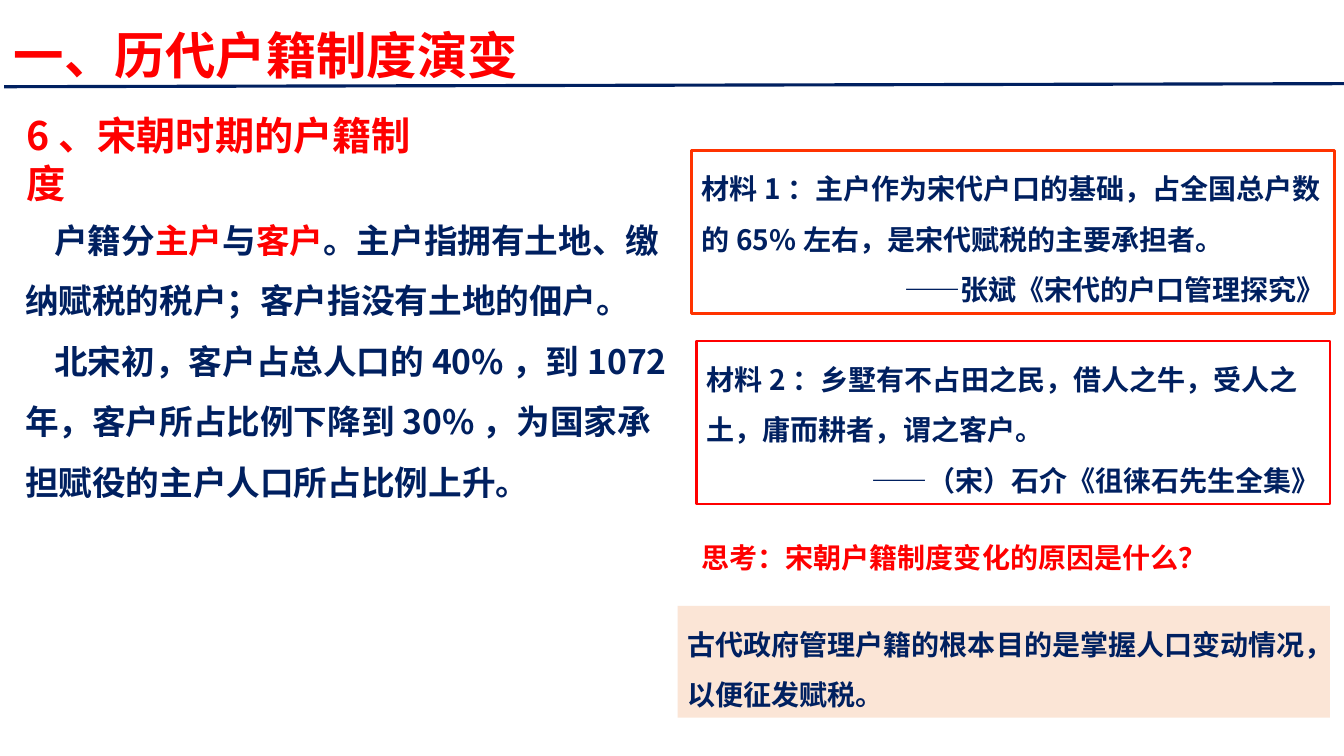
"""Build a slide on the household registration system of the Song dynasty."""
from lxml.etree import SubElement
from pptx import Presentation
from pptx.dml.color import RGBColor
from pptx.enum.shapes import MSO_CONNECTOR, MSO_SHAPE
from pptx.enum.text import MSO_ANCHOR, MSO_AUTO_SIZE, PP_ALIGN
from pptx.oxml.ns import qn
from pptx.util import Inches, Pt

COLORS = {"navy": "002060", "red": "FF0000", "orange": "FF3300", "peach": "FBE5D6"}
TITLE_FONT, BODY_FONT = "Noto Sans CJK JP", "Noto Sans CJK SC"
WIDTH, HEIGHT = Inches(13.33), Inches(7.5)
INDENT = Inches(0.29)

RULE = (0.3, 11.47, 100, 11.07)
TEXTS = [
    {"at": (0.3, 2.53, 45.61, 9.47), "size": 36, "font": TITLE_FONT,
     "paras": [[("一、历代户籍制度演变", "red")]]},
    {"at": (1.2, 14.13, 32.93, 7.6), "size": 28,
     "paras": [[("6、宋朝时期的户籍制度", "red")]]},
    {"at": (1.13, 25.73, 49.29, 41.73), "size": 24, "spacing": 1.5, "indent": INDENT,
     "paras": [
         [("户籍分", "navy"), ("主户", "red"), ("与", "navy"), ("客户", "red"),
          ("。主户指拥有土地、缴纳赋税的税户；客户指没有土地的佃户。", "navy")],
         [("北宋初，客户占总人口的40%，到1072年，客户所占比例下降到30%，"
           "为国家承担赋役的主户人口所占比例上升。", "navy")]]},
    {"at": (51.46, 19.87, 47.86, 21.6), "size": 20, "spacing": 1.5, "line": ("orange", 2),
     "paras": [[("材料1：主户作为宋代户口的基础，占全国总户数的65%左右，"
                 "是宋代赋税的主要承担者。", "navy")]],
     "source": "——张斌《宋代的户口管理探究》"},
    {"at": (51.84, 45.07, 47.11, 21.6), "size": 20, "spacing": 1.5, "line": ("red", 1.75),
     "paras": [[("材料2：乡墅有不占田之民，借人之牛，受人之土，庸而耕者，谓之客户。", "navy")]],
     "source": "——（宋）石介《徂徕石先生全集》"},
    {"at": (51.46, 70.8, 40.81, 5.87), "size": 20,
     "paras": [[("思考：宋朝户籍制度变化的原因是什么？", "red")]]},
    {"at": (50.41, 80.13, 48.54, 14.8), "size": 20, "spacing": 1.5, "fill": "peach",
     "paras": [[("古代政府管理户籍的根本目的是掌握人口变动情况，以便征发赋税。", "navy")]]},
]


def rgb(name):
    return RGBColor.from_string(COLORS[name])


def place(percents):
    return [round(v * side / 100) for v, side in zip(percents, (WIDTH, HEIGHT) * 2)]


def add_rule(s):
    line = s.shapes.add_connector(MSO_CONNECTOR.STRAIGHT, *place(RULE))
    line.line.color.rgb = rgb("navy")
    line.line.width = Pt(2.25)
    SubElement(line._element.spPr, qn("a:effectLst"))


def add_frame(s, item):
    if "line" not in item and "fill" not in item:
        return s.shapes.add_textbox(*place(item["at"]))
    sp = s.shapes.add_shape(MSO_SHAPE.RECTANGLE, *place(item["at"]))
    sp.shadow.inherit = False
    if "fill" in item:
        sp.fill.solid()
        sp.fill.fore_color.rgb = rgb(item["fill"])
    else:
        sp.fill.background()
    if "line" in item:
        color, width = item["line"]
        sp.line.color.rgb = rgb(color)
        sp.line.width = Pt(width)
    else:
        sp.line.fill.background()
    return sp


def add_runs(p, runs, item):
    font = item.get("font", BODY_FONT)
    for text, color in runs:
        r = p.add_run()
        r.text = text
        r.font.size = Pt(item["size"])
        r.font.bold = True
        r.font.name = font
        r.font.color.rgb = rgb(color)
        SubElement(r.font._element, qn("a:ea"), typeface=font)


def add_text(s, item):
    tf = add_frame(s, item).text_frame
    tf.word_wrap = True
    tf.auto_size = MSO_AUTO_SIZE.SHAPE_TO_FIT_TEXT
    tf.vertical_anchor = MSO_ANCHOR.TOP
    rows = [(runs, PP_ALIGN.LEFT) for runs in item["paras"]]
    if "source" in item:
        rows.append(([(item["source"], "navy")], PP_ALIGN.RIGHT))
    for i, (runs, align) in enumerate(rows):
        p = tf.add_paragraph() if i else tf.paragraphs[0]
        p.alignment = align
        if "spacing" in item:
            p.line_spacing = item["spacing"]
        if "indent" in item:
            p._p.get_or_add_pPr().set("indent", str(item["indent"]))
        add_runs(p, runs, item)


def main():
    prs = Presentation()
    prs.slide_width, prs.slide_height = WIDTH, HEIGHT
    s = prs.slides.add_slide(prs.slide_layouts[6])
    add_rule(s)
    for item in TEXTS:
        add_text(s, item)
    prs.save("out.pptx")


if __name__ == "__main__":
    main()
